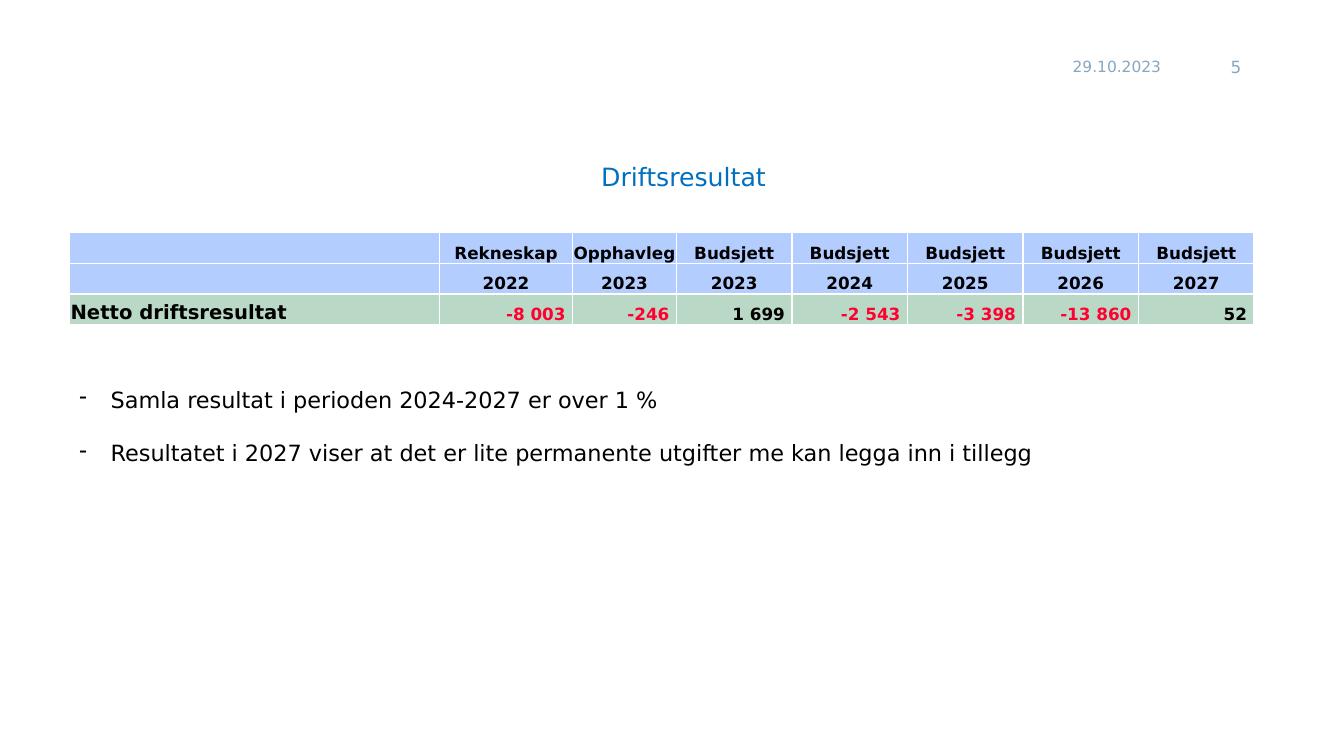
import pptx
import pptx.util
import pptx.dml.color
import pptx.enum.text
import pptx.oxml.ns
import lxml.etree

RGB = pptx.dml.color.RGBColor
ALIGN = pptx.enum.text.PP_ALIGN
ANCHOR = pptx.enum.text.MSO_ANCHOR

BLACK = RGB(0x00, 0x00, 0x00)
RED = RGB(0xFF, 0x00, 0x31)
BLUE = RGB(0x00, 0x70, 0xC0)
STEEL = RGB(0x86, 0xA7, 0xC2)
HEAD = RGB(0xB4, 0xCD, 0xFF)
GREEN = RGB(0xB9, 0xD9, 0xC6)
WHITE = RGB(0xFF, 0xFF, 0xFF)
FONT = "DejaVu Sans"

ROWS = [
    ["", "Rekneskap", "Opphavleg"] + ["Budsjett"] * 5,
    ["", "2022", "2023", "2023", "2024", "2025", "2026", "2027"],
    ["Netto driftsresultat", "-8 003", "-246", "1 699", "-2 543", "-3 398",
     "-13 860", "52"],
]


def px(n):
    return pptx.util.Emu(round(n * 9144))


def style(para, size, color, align=ALIGN.LEFT, bold=False):
    para.alignment = align
    for run in para.runs:
        font = run.font
        font.name = FONT
        font.size = pptx.util.Pt(size)
        font.bold = bold
        font.color.rgb = color


def add_node(parent, tag, **attrs):
    return lxml.etree.SubElement(parent, pptx.oxml.ns.qn(tag), **attrs)


def add_label(slide, box, text, size, align):
    frame = slide.shapes.add_textbox(*map(px, box)).text_frame
    frame.word_wrap = True
    frame.vertical_anchor = ANCHOR.MIDDLE
    frame.text = text
    style(frame.paragraphs[0], size, STEEL, align)


def add_header(slide, box):
    x, y, w, h = box
    add_label(slide, (x, y, 115, h), "29.10.2023", 11, ALIGN.LEFT)
    add_label(slide, (x + w - 57, y, 57, h), "5", 12, ALIGN.RIGHT)


def add_title(slide, box):
    title = slide.shapes.title
    title.left, title.top, title.width, title.height = map(px, box)
    frame = title.text_frame
    frame.vertical_anchor = ANCHOR.TOP
    frame.text = "Driftsresultat"
    style(frame.paragraphs[0], 18, BLUE, ALIGN.CENTER)


def add_edges(cell):
    props = cell._tc.get_or_add_tcPr()
    for side in ("a:lnL", "a:lnR", "a:lnT", "a:lnB"):
        line = add_node(props, side, w=str(pptx.util.Pt(1)))
        fill = add_node(line, "a:solidFill")
        add_node(fill, "a:srgbClr", val=str(WHITE))


def fill_cell(cell, text, total, first):
    add_edges(cell)
    cell.fill.solid()
    cell.fill.fore_color.rgb = GREEN if total else HEAD
    cell.vertical_anchor = ANCHOR.BOTTOM
    cell.margin_left = cell.margin_top = px(1)
    cell.margin_right = px(7 if total else 1)
    cell.margin_bottom = 0
    cell.text_frame.text = text
    para = cell.text_frame.paragraphs[0]
    if not text:
        add_node(para._p, "a:endParaRPr", sz="1200")
    elif total and first:
        style(para, 14, BLACK, bold=True)
    elif total:
        color = RED if text.startswith("-") else BLACK
        style(para, 12, color, ALIGN.RIGHT, True)
    else:
        style(para, 12, BLACK, ALIGN.CENTER, True)


def add_budget(slide, box):
    x, y, w, h = box
    table = slide.shapes.add_table(len(ROWS), len(ROWS[0]), *map(px, box)).table
    table.first_row = table.horz_banding = False
    widths = [367, 132, 103]
    widths += [(w - sum(widths)) / 5] * 5
    for col, width in zip(table.columns, widths):
        col.width = px(width)
    for r, row in enumerate(ROWS):
        table.rows[r].height = px(h / len(ROWS))
        for c, text in enumerate(row):
            fill_cell(table.cell(r, c), text, r == 2, c == 0)


def add_notes(slide, box):
    frame = slide.shapes.add_textbox(*map(px, box)).text_frame
    frame.word_wrap = True
    frame.text = (
        "Samla resultat i perioden 2024-2027 er over 1 %\n"
        "Resultatet i 2027 viser at det er lite permanente utgifter "
        "me kan legga inn i tillegg"
    )
    for i, para in enumerate(frame.paragraphs):
        props = para._p.get_or_add_pPr()
        props.set("marL", str(px(31)))
        props.set("indent", str(px(-31)))
        add_node(props, "a:buChar", char="-")
        if i:
            para.space_before = pptx.util.Pt(19)
        style(para, 16, BLACK)


def main():
    deck = pptx.Presentation()
    deck.slide_width, deck.slide_height = px(1333), px(750)
    slide = deck.slides.add_slide(deck.slide_layouts[5])
    add_header(slide, (1054, 46, 187, 40))
    add_title(slide, (238, 155, 880, 40))
    add_notes(slide, (69, 378, 1154, 114))
    add_budget(slide, (69, 231, 1175, 91))
    deck.save("out.pptx")


if __name__ == "__main__":
    main()
